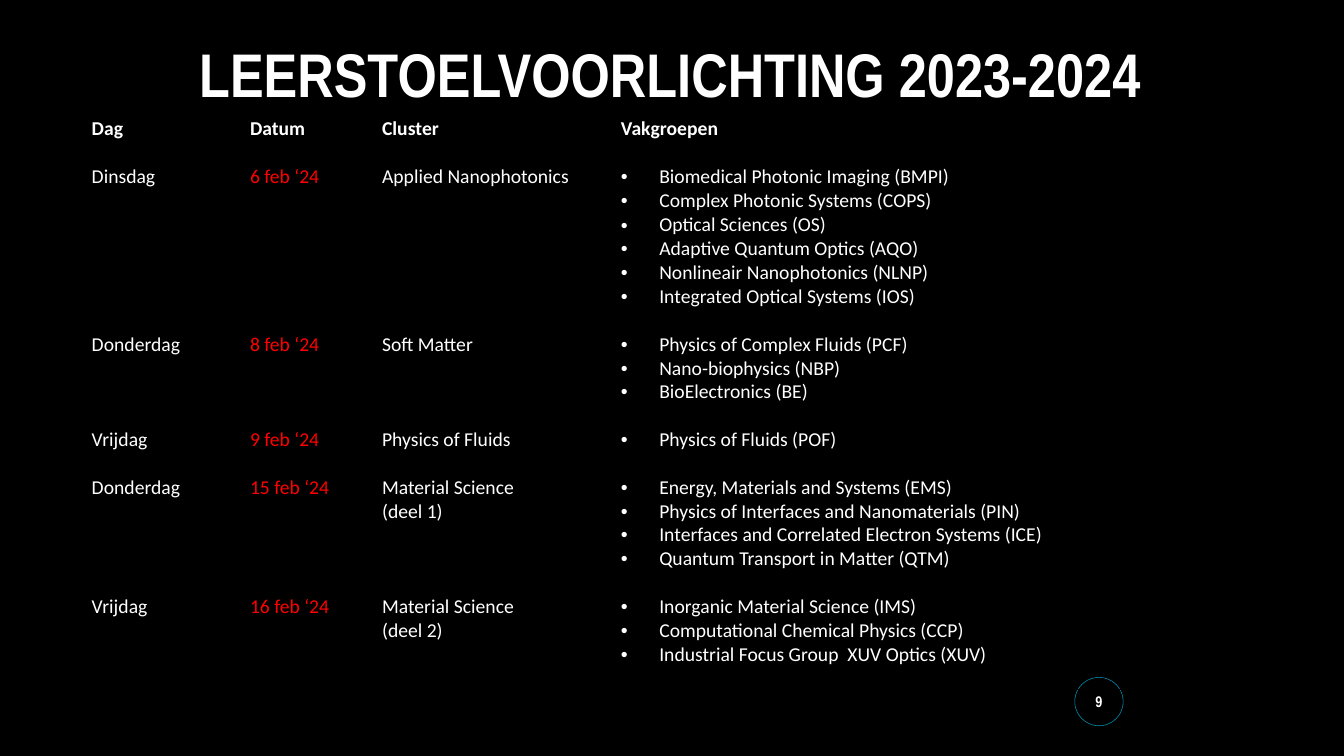
from lxml.etree import SubElement
from pptx import Presentation
from pptx.dml.color import RGBColor
from pptx.enum.shapes import MSO_SHAPE as Shape
from pptx.enum.text import MSO_ANCHOR as Anchor, PP_ALIGN as Align
from pptx.oxml.ns import qn
from pptx.util import Emu, Inches, Pt

BLACK = RGBColor(0x00, 0x00, 0x00)
WHITE = RGBColor(0xFF, 0xFF, 0xFF)
RED = RGBColor(0xFF, 0x00, 0x00)
TEAL = RGBColor(0x00, 0x93, 0xB3)
DISPLAY, BODY = "Arial Narrow", "Calibri"

# Grid: row heights count text lines
LINE = Emu(int(Inches(6.15) / 26))
ROW_LINES = (2, 2, 9, 2, 5, 4, 2)
COLUMNS = (1.57, 1.31, 2.37, 5.94)
INDENT = Inches(0.38)

HEADINGS = ("Dag", "Datum", "Cluster", "Vakgroepen")
# Day, date, cluster, lines above the day, groups per block
SESSIONS = (
    ("Dinsdag", "6 feb ‘24", "Applied Nanophotonics", 0,
     [["Biomedical Photonic Imaging (BMPI)", "Complex Photonic Systems (COPS)"]]),
    ("Donderdag", "8 feb ‘24", "Soft Matter", 5,
     [["Optical Sciences (OS)", "Adaptive Quantum Optics (AQO)",
       "Nonlineair Nanophotonics (NLNP)", "Integrated Optical Systems (IOS)"],
      ["Physics of Complex Fluids (PCF)", "Nano-biophysics (NBP)",
       "BioElectronics (BE)"]]),
    ("Vrijdag", "9 feb ‘24", "Physics of Fluids", 0,
     [["Physics of Fluids (POF)"]]),
    ("Donderdag", "15 feb ‘24", "Material Science\v(deel 1)", 0,
     [["Energy, Materials and Systems (EMS)",
       "Physics of Interfaces and Nanomaterials (PIN)",
       "Interfaces and Correlated Electron Systems (ICE)",
       "Quantum Transport in Matter (QTM)"]]),
    ("Vrijdag", "16 feb ‘24", "Material Science\v(deel 2)", 0,
     [["Inorganic Material Science (IMS)", "Computational Chemical Physics (CCP)",
       "Industrial Focus Group  XUV Optics (XUV)"]]),
)


def style(paragraph, name, size, color=WHITE, bold=False):
    font = paragraph.font
    font.name, font.size, font.bold = name, Pt(size), bold
    font.color.rgb = color


def add_bullet(paragraph):
    props = paragraph._p.get_or_add_pPr()
    props.set("marL", str(INDENT))
    props.set("indent", str(-INDENT))
    SubElement(props, qn("a:buFont"), typeface="Arial")
    SubElement(props, qn("a:buChar"), char="•")
    tabs = SubElement(props, qn("a:tabLst"))
    SubElement(tabs, qn("a:tab"), pos=str(Inches(0.5)), algn="l")


def format_cell(cell):
    cell.margin_left = cell.margin_right = Inches(0.07)
    cell.margin_top, cell.margin_bottom = Inches(0.01), 0
    props = cell._tc.get_or_add_tcPr()
    for side in ("lnL", "lnR", "lnT", "lnB"):
        border = SubElement(props, qn(f"a:{side}"), w=str(Pt(1)))
        fill = SubElement(border, qn("a:solidFill"))
        SubElement(fill, qn("a:srgbClr"), val=str(BLACK))
    cell.fill.background()


def write_cell(cell, text, color=WHITE, bold=False, lines_above=0):
    cell.margin_top = Inches(0.01) + lines_above * LINE
    cell.text = text
    style(cell.text_frame.paragraphs[0], BODY, 14, color, bold)


def write_groups(cell, blocks):
    frame = cell.text_frame
    for block_no, block in enumerate(blocks):
        for group_no, group in enumerate(block):
            first = block_no == group_no == 0
            item = frame.paragraphs[0] if first else frame.add_paragraph()
            item.text = group
            add_bullet(item)
            if block_no and not group_no:
                item.space_before = Pt(17)
            style(item, BODY, 14)


def add_schedule(slide):
    schedule = slide.shapes.add_table(
        len(ROW_LINES), len(COLUMNS), Inches(0.84), Inches(1.15),
        Inches(sum(COLUMNS)), LINE * sum(ROW_LINES)).table
    schedule.first_row = schedule.horz_banding = False
    for column, width in zip(schedule.columns, COLUMNS):
        column.width = Inches(width)
    for row, lines in zip(schedule.rows, ROW_LINES):
        row.height = Emu(LINE * lines)
    for cell in schedule.iter_cells():
        format_cell(cell)

    for col, heading in enumerate(HEADINGS):
        write_cell(schedule.cell(0, col), heading, bold=True)
    for row, (day, date, cluster, above, blocks) in enumerate(SESSIONS, 1):
        for col, (text, color) in enumerate(
                ((day, WHITE), (date, RED), (cluster, WHITE))):
            write_cell(schedule.cell(row, col), text, color, lines_above=above)
        write_groups(schedule.cell(row, 3), blocks)


def add_page_number(slide, number):
    badge = slide.shapes.add_shape(Shape.OVAL, Inches(10.66), Inches(6.72),
                                   Inches(0.48), Inches(0.48))
    badge.shadow.inherit = False
    badge.fill.solid()
    badge.fill.fore_color.rgb = BLACK
    badge.line.color.rgb = TEAL
    badge.line.width = Pt(4 / 10)
    frame = badge.text_frame
    frame.margin_left = frame.margin_right = 0
    frame.margin_top = frame.margin_bottom = 0
    frame.vertical_anchor = Anchor.MIDDLE
    frame.text = number
    frame.paragraphs[0].alignment = Align.CENTER
    style(frame.paragraphs[0], DISPLAY, 11, bold=True)


def add_title(slide, text):
    frame = slide.shapes.add_textbox(Inches(0.75), Inches(0.31),
                                     Inches(11.8), Inches(0.84)).text_frame
    frame.word_wrap = True
    frame.text = text
    frame.paragraphs[0].alignment = Align.CENTER
    style(frame.paragraphs[0], DISPLAY, 44, bold=True)


def main():
    deck = Presentation()
    deck.slide_width, deck.slide_height = Inches(13.33), Inches(7.5)
    slide = deck.slides.add_slide(deck.slide_layouts[6])
    slide.background.fill.solid()
    slide.background.fill.fore_color.rgb = BLACK

    add_page_number(slide, "9")
    add_schedule(slide)
    add_title(slide, "LEERSTOELVOORLICHTING 2023-2024")
    deck.save("out.pptx")


if __name__ == "__main__":
    main()
